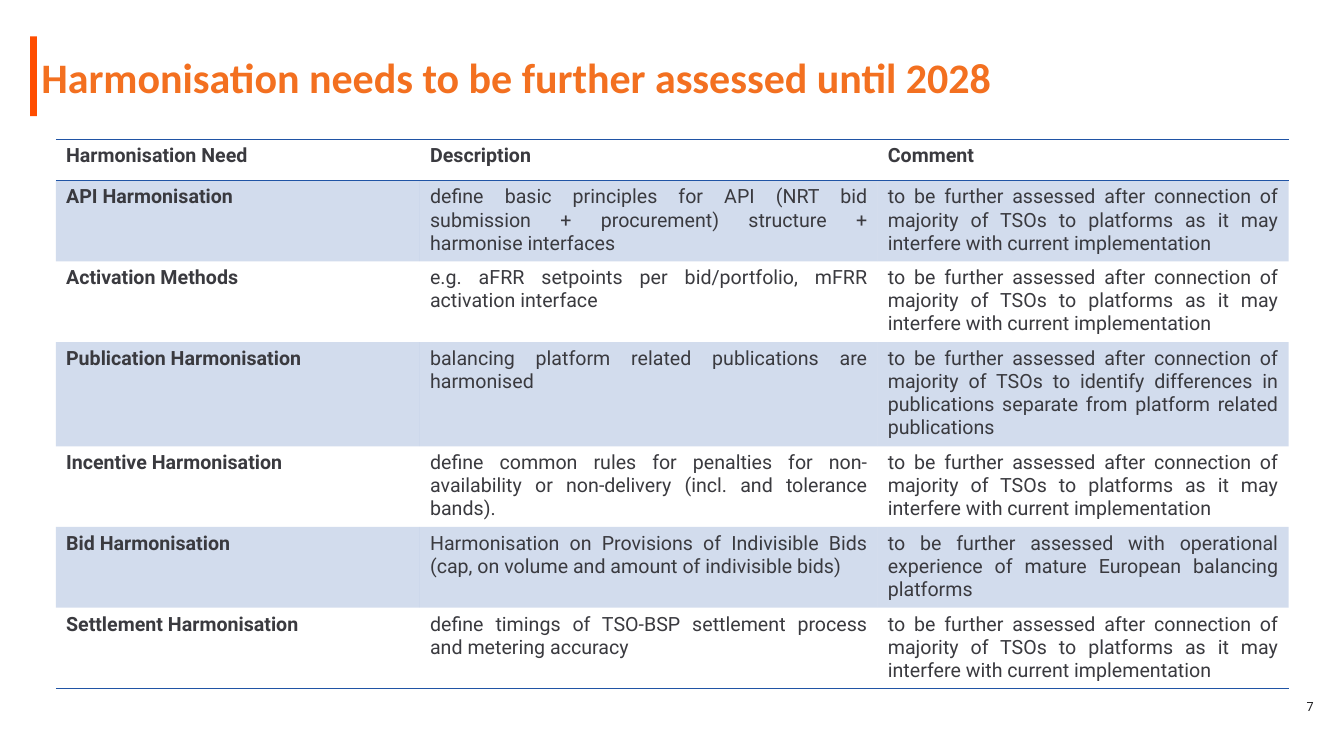
from dataclasses import dataclass

from lxml import etree
from pptx import Presentation
from pptx import util as u
from pptx.dml.color import RGBColor
from pptx.enum import shapes, text
from pptx.oxml import ns

BLUE = RGBColor(0x20, 0x54, 0xA5)
ORANGE = RGBColor(0xF3, 0x70, 0x20)
BAR_ORANGE = RGBColor(0xFF, 0x4D, 0x00)
CHARCOAL = RGBColor(0x3A, 0x3A, 0x3F)
BLACK = RGBColor(0x1D, 0x1D, 0x20)

NO_STYLE = "{2D5ABB26-0587-4C30-8999-92F81FD0307C}"
BAND_OPACITY = 20
COLUMN_WIDTHS = (260, 327, 293.5)
HEADER_HEIGHT = 29.5
PLATFORM_COMMENT = (
    "to be further assessed after connection of majority of TSOs to platforms "
    "as it may interfere with current implementation"
)


@dataclass(frozen=True)
class Need:
    name: str
    description: str
    comment: str = PLATFORM_COMMENT
    height: float = 57


@dataclass(frozen=True)
class Label:
    wording: str
    left: float
    top: float
    width: float
    height: float
    font: str
    size: float
    spacing: float
    color: RGBColor
    bold: bool = False
    align: text.PP_ALIGN = text.PP_ALIGN.LEFT
    anchor: text.MSO_ANCHOR = text.MSO_ANCHOR.TOP


LABELS = (
    Label("7", 486, 491, 459.5, 29, "Roboto", 9, 9, BLACK,
          align=text.PP_ALIGN.RIGHT, anchor=text.MSO_ANCHOR.MIDDLE),
    Label("Harmonisation needs to be further assessed until 2028",
          22.5, 37.5, 915, 73.5, "Calibri", 30, 32, ORANGE, bold=True),
)

NEEDS = (
    Need("Harmonisation Need", "Description", "Comment", HEADER_HEIGHT),
    Need("API Harmonisation",
         "define basic principles for API (NRT bid submission + procurement) "
         "structure + harmonise interfaces"),
    Need("Activation Methods",
         "e.g. aFRR setpoints per bid/portfolio, mFRR activation interface"),
    Need("Publication Harmonisation",
         "balancing platform related publications are harmonised",
         "to be further assessed after connection of majority of TSOs to identify "
         "differences in publications separate from platform related publications",
         73),
    Need("Incentive Harmonisation",
         "define common rules for penalties for non-availability or non-delivery "
         "(incl. and tolerance bands)."),
    Need("Bid Harmonisation",
         "Harmonisation on Provisions of Indivisible Bids "
         "(cap, on volume and amount of indivisible bids)",
         "to be further assessed with operational experience of mature European "
         "balancing platforms"),
    Need("Settlement Harmonisation",
         "define timings of TSO-BSP settlement process and metering accuracy"),
)


def style_text(para, font: str, size: float, color: RGBColor, bold: bool) -> None:
    for span in para.runs:
        span.font.name = font
        span.font.size = u.Pt(size)
        span.font.color.rgb = color
        span.font.bold = bold


def add_label(page, label: Label) -> None:
    box = page.shapes.add_textbox(
        *map(u.Pt, (label.left, label.top, label.width, label.height)))
    frame = box.text_frame
    frame.word_wrap = True
    frame.vertical_anchor = label.anchor
    frame.text = label.wording
    para = frame.paragraphs[0]
    para.alignment = label.align
    para.line_spacing = u.Pt(label.spacing)
    style_text(para, label.font, label.size, label.color, label.bold)


def add_title_bar(page) -> None:
    bar = page.shapes.add_shape(
        shapes.MSO_SHAPE.RECTANGLE, *map(u.Pt, (21.5, 26, 5, 57)))
    bar.shadow.inherit = False
    bar.fill.solid()
    bar.fill.fore_color.rgb = BAR_ORANGE
    bar.line.fill.background()


def add_border(cell, side: str) -> None:
    line = etree.Element(ns.qn(f"a:ln{side}"), w=str(u.Pt(1)))
    fill = etree.SubElement(line, ns.qn("a:solidFill"))
    etree.SubElement(fill, ns.qn("a:srgbClr"), val=str(BLUE))
    cell._tc.get_or_add_tcPr().insert(0, line)


def fill_band(cell) -> None:
    cell.fill.solid()
    cell.fill.fore_color.rgb = BLUE
    color = cell._tc.tcPr.find(".//" + ns.qn("a:srgbClr"))
    etree.SubElement(color, ns.qn("a:alpha"), val=str(BAND_OPACITY * 1000))


def add_needs_table(page, needs: tuple[Need, ...]) -> None:
    frame = page.shapes.add_table(
        len(needs), len(COLUMN_WIDTHS), u.Pt(40), u.Pt(99.5),
        u.Pt(sum(COLUMN_WIDTHS)), u.Pt(sum(need.height for need in needs)))
    table = frame.table
    table._tbl.tblPr.find(ns.qn("a:tableStyleId")).text = NO_STYLE
    table.first_row = table.horz_banding = False
    for column, width in zip(table.columns, COLUMN_WIDTHS):
        column.width = u.Pt(width)
    for row_index, need in enumerate(needs):
        table.rows[row_index].height = u.Pt(need.height)
        for column_index, wording in enumerate(
                (need.name, need.description, need.comment)):
            cell = table.cell(row_index, column_index)
            cell.text_frame.text = wording
            para = cell.text_frame.paragraphs[0]
            para.alignment = text.PP_ALIGN.JUSTIFY
            style_text(para, "Roboto", 14, CHARCOAL,
                       row_index == 0 or column_index == 0)
            if row_index % 2:
                fill_band(cell)
            else:
                cell.fill.background()
            if row_index in (0, len(needs) - 1):
                add_border(cell, "B")
            if row_index == 0:
                add_border(cell, "T")


def main() -> None:
    deck = Presentation()
    deck.slide_width = u.Pt(960)
    deck.slide_height = u.Pt(540)
    page = deck.slides.add_slide(deck.slide_layouts[6])
    add_title_bar(page)
    for label in LABELS:
        add_label(page, label)
    add_needs_table(page, NEEDS)
    deck.save("out.pptx")


if __name__ == "__main__":
    main()
